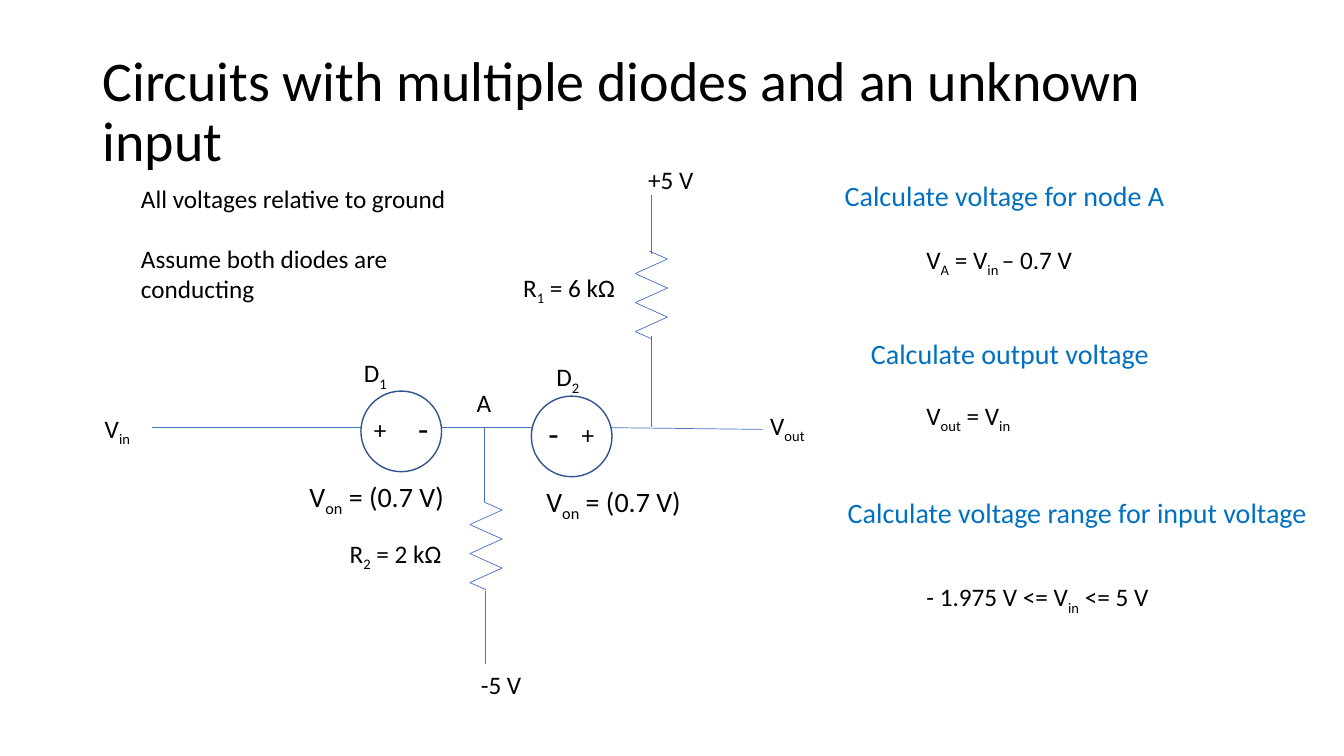
from dataclasses import dataclass

import pptx
import pptx.dml.color
import pptx.enum.shapes
import pptx.enum.text
import pptx.oxml
import pptx.oxml.ns
import pptx.util

Inches = pptx.util.Inches
Pt = pptx.util.Pt
RGBColor = pptx.dml.color.RGBColor

BLACK = RGBColor(0x00, 0x00, 0x00)
WHITE = RGBColor(0xFF, 0xFF, 0xFF)
HEADING_BLUE = RGBColor(0x00, 0x70, 0xC0)
WIRE_BLUE = RGBColor(0x44, 0x72, 0xC4)
OUTLINE_BLUE = RGBColor(0x32, 0x54, 0x91)

DIODE_SIZE = 0.8
ZIGZAG_WIDTH = 0.32


@dataclass
class Label:
    """Text in which every second part between bars is a subscript."""
    text: str
    left: float
    top: float
    width: float
    height: float = 0.4
    size: int = 18
    color: RGBColor = BLACK
    grows: bool = True


@dataclass
class Wire:
    start: tuple[float, float]
    end: tuple[float, float]


@dataclass
class Resistor:
    left: float
    top: float


@dataclass
class Diode:
    """A conducting diode as a voltage source; offsets count from its left edge."""
    left: float
    top: float
    minus_offset: float
    plus_offset: float
    voltage_offset: float


TITLE = Label("Circuits with multiple diodes and an unknown input",
              0.92, 0.4, 11.75, 1.45, size=40, grows=False)

LABELS = [
    Label("V|in", 0.94, 4.05, 0.71),
    Label("V|out", 7.54, 4.02, 0.71),
    Label("+5 V", 6.33, 1.58, 0.71),
    Label("-5 V", 4.67, 6.59, 0.71),
    Label("R|1| = 6 kΩ", 5.09, 2.65, 1.3),
    Label("R|2| = 2 kΩ", 3.37, 5.29, 1.3),
    Label("D|1", 3.51, 3.5, 0.63),
    Label("D|2", 5.42, 3.54, 0.63),
    Label("A", 4.63, 3.79, 0.55),
    Label("All voltages relative to ground", 1.3, 1.77, 3.29),
    Label("Assume both diodes are conducting", 1.3, 2.36, 3.29, 0.71),
    Label("Calculate voltage for node A", 8.28, 1.72, 4.96, 0.44, 20, HEADING_BLUE),
    Label("V|A| = V|in |– 0.7 V", 9.09, 2.37, 1.95),
    Label("Calculate output voltage", 8.54, 3.29, 3.14, 0.44, 20, HEADING_BLUE),
    Label("V|out| = V|in", 9.09, 3.92, 2.57),
    Label("Calculate voltage range for input voltage", 8.31, 4.87, 4.96, 0.44, 20, HEADING_BLUE),
    Label("- 1.975 V <= V|in| <= 5 V", 9.09, 5.72, 3.01),
]

WIRES = [
    Wire((5.37, 4.24), (4.22, 4.24)),
    Wire((3.79, 4.24), (1.51, 4.24)),
    Wire((5.8, 4.24), (7.57, 4.26)),
    Wire((4.8, 4.24), (4.8, 4.98)),
    Wire((4.81, 5.86), (4.81, 6.59)),
    Wire((6.46, 3.33), (6.46, 4.24)),
    Wire((6.46, 2.52), (6.46, 1.93)),
]

RESISTORS = [Resistor(6.3, 2.49), Resistor(4.66, 4.98)]

DIODES = [
    Diode(3.58, 3.88, minus_offset=0.47, plus_offset=0.03, voltage_offset=-0.61),
    Diode(5.27, 3.93, minus_offset=0.07, plus_offset=0.4, voltage_offset=0.05),
]


def add_label(shapes, label: Label):
    box = shapes.add_textbox(Inches(label.left), Inches(label.top),
                             Inches(label.width), Inches(label.height))
    auto_size = pptx.enum.text.MSO_AUTO_SIZE
    frame_format = {
        "word_wrap": True,
        "auto_size": auto_size.SHAPE_TO_FIT_TEXT if label.grows else auto_size.NONE,
    }
    for name, value in frame_format.items():
        setattr(box.text_frame, name, value)

    paragraph = box.text_frame.paragraphs[0]
    for index, part in enumerate(label.text.split("|")):
        run = paragraph.add_run()
        run.text = part
        for name, value in {"name": "Calibri", "size": Pt(label.size)}.items():
            setattr(run.font, name, value)
        run.font.color.rgb = label.color
        if index % 2:
            run._r.get_or_add_rPr().set("baseline", "-25000")
    return box


def add_wire(shapes, wire: Wire) -> None:
    connector = shapes.add_connector(
        pptx.enum.shapes.MSO_CONNECTOR.STRAIGHT,
        *(Inches(value) for value in (*wire.start, *wire.end)))
    connector.line.color.rgb = WIRE_BLUE
    connector.line.width = Pt(0.5)
    properties = connector._element.spPr
    properties.append(pptx.oxml.parse_xml(
        f"<a:effectLst {pptx.oxml.ns.nsdecls('a')}/>"))


def add_resistor(shapes, resistor: Resistor) -> None:
    group = shapes.add_group_shape()
    turns = [(ZIGZAG_WIDTH * (turn % 2 == 0), 0.08 + 0.144 * turn) for turn in range(6)]
    points = [(resistor.left + x, resistor.top + y)
              for x, y in [(0.14, 0), *turns, (0.16, 0.87)]]
    for start, end in zip(points, points[1:]):
        add_wire(group.shapes, Wire(start, end))


def add_diode(shapes, diode: Diode) -> None:
    group = shapes.add_group_shape()
    circle = group.shapes.add_shape(
        pptx.enum.shapes.MSO_SHAPE.OVAL, Inches(diode.left), Inches(diode.top),
        Inches(DIODE_SIZE), Inches(DIODE_SIZE))
    circle.shadow.inherit = False
    circle.fill.solid()
    circle.fill.fore_color.rgb = WHITE
    circle.line.color.rgb = OUTLINE_BLUE
    circle.line.width = Pt(1)

    add_label(group.shapes, Label("-", diode.left + diode.minus_offset,
                                  diode.top + 0.12, 0.36, 0.5, 24))
    add_label(group.shapes, Label("+", diode.left + diode.plus_offset,
                                  diode.top + 0.18, 0.36))
    voltage = add_label(group.shapes, Label(
        "V|on| = (0.7 V)", diode.left + diode.voltage_offset, diode.top + 0.83,
        1.78, 0.61, 20, grows=False))
    spacing = {"line_spacing": 0.9, "space_before": Pt(10)}
    for name, value in spacing.items():
        setattr(voltage.text_frame.paragraphs[0], name, value)


def main() -> None:
    presentation = pptx.Presentation()
    presentation.slide_width = Inches(13.33)
    presentation.slide_height = Inches(7.5)
    slide = presentation.slides.add_slide(presentation.slide_layouts[6])

    title = add_label(slide.shapes, TITLE)
    title.text_frame.vertical_anchor = pptx.enum.text.MSO_ANCHOR.MIDDLE
    title.text_frame.paragraphs[0].line_spacing = 0.9

    for wire in WIRES:
        add_wire(slide.shapes, wire)
    for resistor in RESISTORS:
        add_resistor(slide.shapes, resistor)
    for label in LABELS:
        add_label(slide.shapes, label)
    for diode in DIODES:
        add_diode(slide.shapes, diode)

    presentation.save("out.pptx")


if __name__ == "__main__":
    main()
